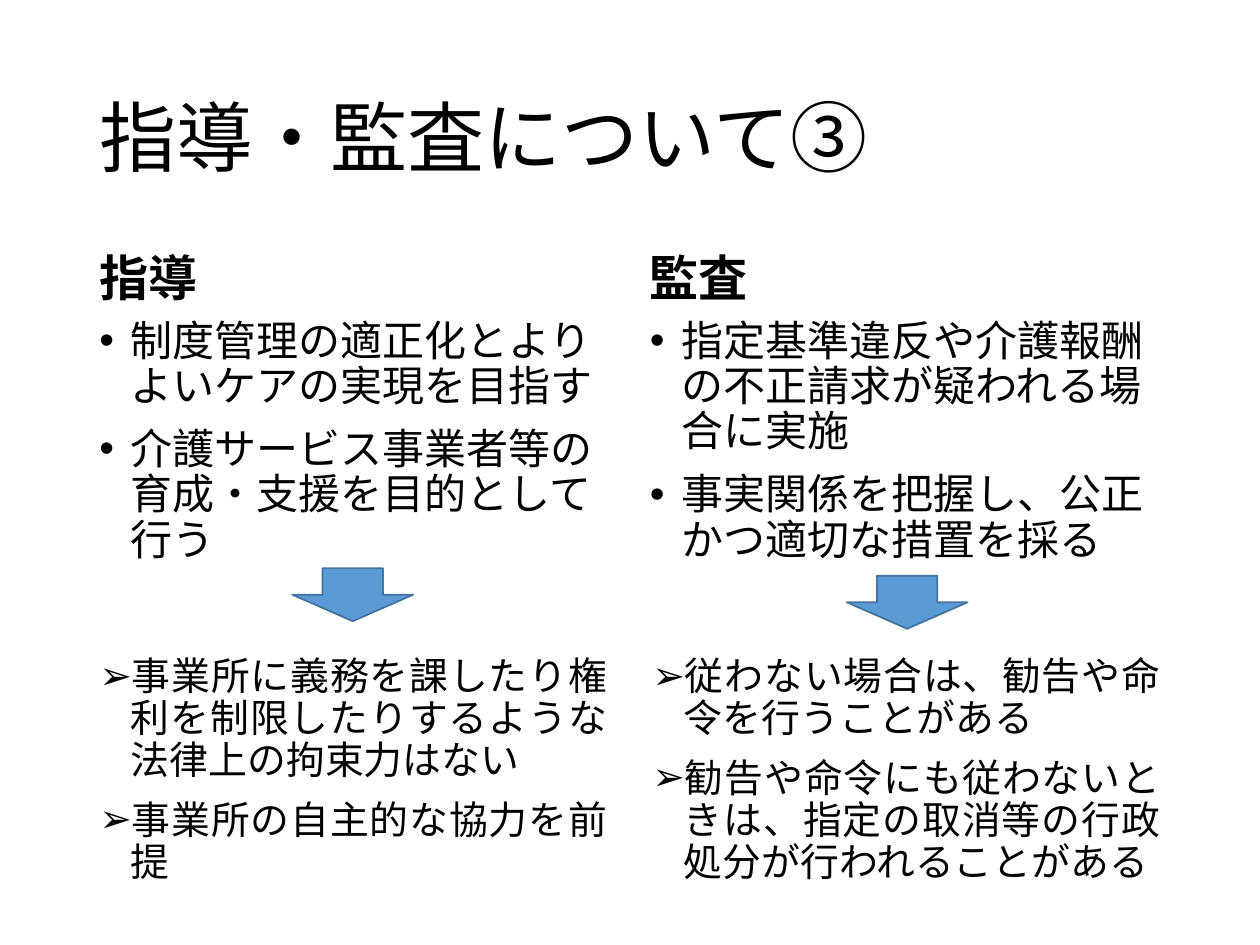
from lxml.etree import SubElement
from pptx import Presentation
from pptx.dml.color import RGBColor
from pptx.enum.shapes import MSO_SHAPE as Shape
from pptx.enum.text import MSO_ANCHOR as Anchor, PP_ALIGN as Align
from pptx.oxml.ns import qn
from pptx.util import Inches, Pt

FONT = "Quicksand"
TITLE = "指導・監査について③"
COLUMNS = [
    {
        "left": 0.69, "width": 4.23, "heading": "指導",
        "aims": ["制度管理の適正化とよりよいケアの実現を目指す",
                 "介護サービス事業者等の育成・支援を目的として行う"],
        "result_left": 0.69,
        "results": ["事業所に義務を課したり権利を制限したりするような法律上の拘束力はない",
                    "事業所の自主的な協力を前提"],
        "arrow": (2.32, 4.51),
    },
    {
        "left": 5.06, "width": 4.25, "heading": "監査",
        "aims": ["指定基準違反や介護報酬の不正請求が疑われる場合に実施",
                 "事実関係を把握し、公正かつ適切な措置を採る"],
        "result_left": 5.08,
        "results": ["従わない場合は、勧告や命令を行うことがある",
                    "勧告や命令にも従わないときは、指定の取消等の行政処分が行われることがある"],
        "arrow": (6.72, 4.57),
    },
]


def color(value):
    """Turn a hex string into a colour."""
    return RGBColor.from_string(value)


def add_bullet(para, mark):
    """Give a paragraph a hanging bullet."""
    props = para._p.get_or_add_pPr()
    props.set("marL", str(Inches(0.25)))
    props.set("indent", str(Inches(-0.25)))
    SubElement(props, qn("a:buFont")).set("typeface", "Arial")
    SubElement(props, qn("a:buChar")).set("char", mark)


def add_text(page, place, lines, size, bold=False, anchor=Anchor.TOP,
             align=Align.LEFT, before=10, mark=None):
    """Add a text box with one paragraph per line."""
    box = page.shapes.add_textbox(*map(Inches, place))
    frame = box.text_frame
    frame.word_wrap = True
    frame.vertical_anchor = anchor
    for index, line in enumerate(lines):
        para = frame.add_paragraph() if index else frame.paragraphs[0]
        para.alignment = align
        para.line_spacing = 0.9
        para.space_before = Pt(before)
        if mark:
            add_bullet(para, mark)
        span = para.add_run()
        span.text = line
        span.font.size = Pt(size)
        span.font.bold = bold
        span.font.name = FONT
        span.font.color.rgb = color("000000")
        SubElement(span._r.get_or_add_rPr(), qn("a:ea")).set("typeface", FONT)


def add_arrow(page, left, top):
    """Add a down arrow."""
    arrow = page.shapes.add_shape(
        Shape.DOWN_ARROW, *map(Inches, (left, top, 0.96, 0.42)))
    arrow.shadow.inherit = False
    arrow.fill.solid()
    arrow.fill.fore_color.rgb = color("5B9BD5")
    arrow.line.color.rgb = color("43739E")
    arrow.line.width = Pt(1)


def main():
    """Build the slide and save it."""
    deck = Presentation()
    deck.slide_width, deck.slide_height = Inches(10), Inches(7.5)
    page = deck.slides.add_slide(deck.slide_layouts[6])
    add_text(page, (0.69, 0.4, 8.62, 1.45), [TITLE], 44,
             anchor=Anchor.MIDDLE, before=0)
    for column in COLUMNS:
        left, width = column["left"], column["width"]
        add_text(page, (left, 1.85, width, 0.64), [column["heading"]], 28,
                 bold=True, anchor=Anchor.BOTTOM)
        add_text(page, (left, 2.49, width, 2.14), column["aims"], 24, mark="•")
        add_text(page, (column["result_left"], 4.93, 4.23, 2.14),
                 column["results"], 22.2, anchor=Anchor.BOTTOM,
                 align=Align.JUSTIFY, mark="➢")
        add_arrow(page, *column["arrow"])
    deck.save("out.pptx")


if __name__ == "__main__":
    main()
